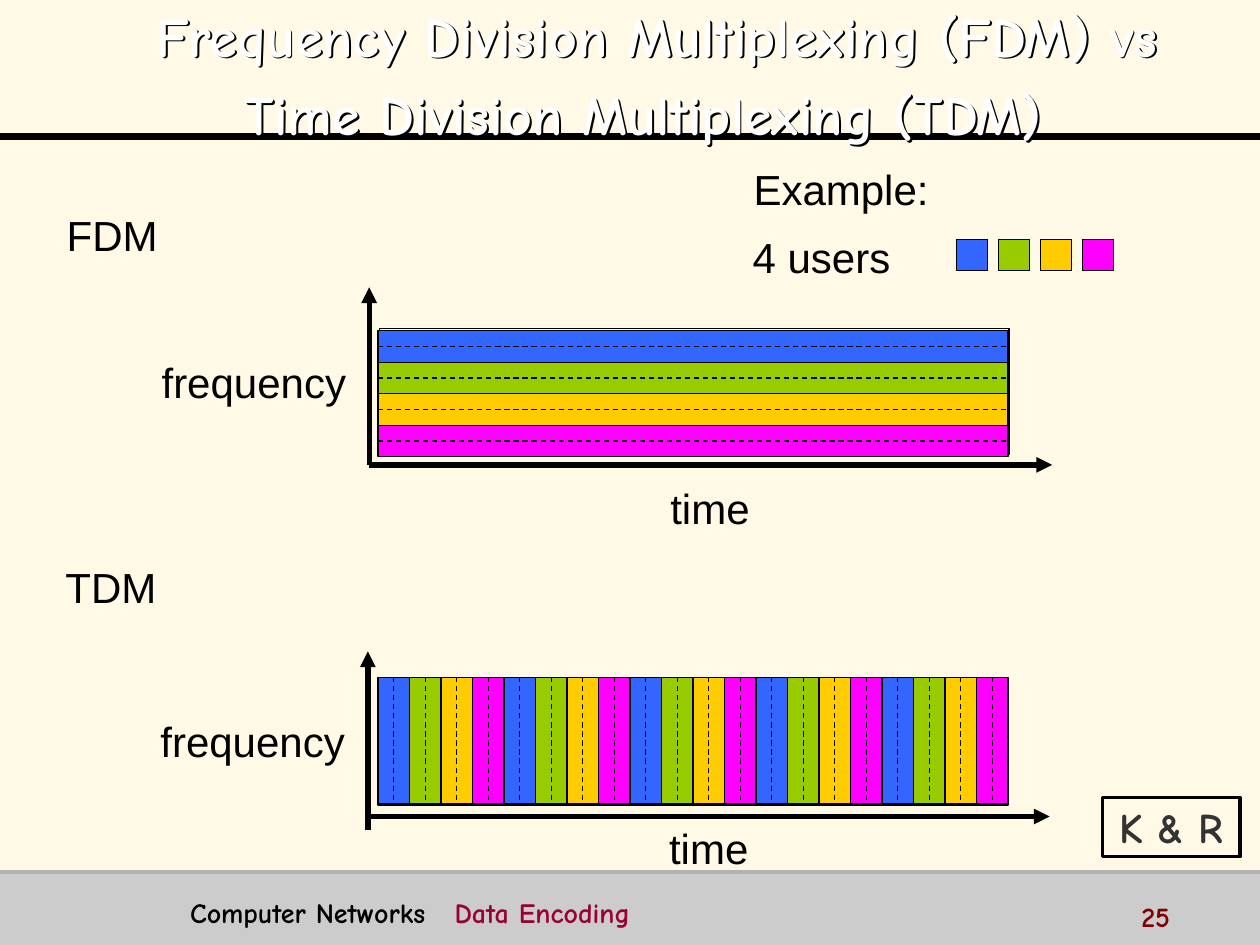
from dataclasses import dataclass

from lxml import etree
from pptx import Presentation
from pptx.dml.color import RGBColor
from pptx.enum.dml import MSO_LINE
from pptx.enum.shapes import MSO_CONNECTOR, MSO_SHAPE
from pptx.enum.text import MSO_ANCHOR, MSO_AUTO_SIZE, PP_ALIGN
from pptx.oxml.ns import qn
from pptx.util import Inches, Pt

STRAIGHT = MSO_CONNECTOR.STRAIGHT
RECTANGLE = MSO_SHAPE.RECTANGLE
DASH = MSO_LINE.DASH
CENTER, LEFT = PP_ALIGN.CENTER, PP_ALIGN.LEFT
MIDDLE = MSO_ANCHOR.MIDDLE

BLACK = "000000"
USER_COLORS = ("3366FF", "99CC00", "FFCC00", "FF00FF")
BODY_FONT, COMIC_FONT = "Arial", "Comic Neue"
BAND = 0.25
PLOT_LEFT, PLOT_WIDTH, PLOT_HEIGHT = 3, 5, 1
PLOT_RIGHT = PLOT_LEFT + PLOT_WIDTH
FDM_TOP = 2.75 - BAND / 2
TDM_TOP = 5.5 - BAND / 2


@dataclass(frozen=True)
class Label:
    text: str
    left: float
    top: float
    width: float


@dataclass(frozen=True)
class Diagram:
    labels: tuple[Label, ...]
    axis_x: float
    axis_bottom: float
    axis_top: float
    time_y: float
    time_end: float
    frame_left: float
    frame_top: float


FDM = Diagram(
    (Label("FDM", 0.43, 1.61, 0.92), Label("frequency", 1.18, 2.78, 1.67),
     Label("time", 5.22, 3.78, 0.83)),
    2.93, 3.69, 2.28, 3.69, 8.35, 3.01, 2.61)
TDM = Diagram(
    (Label("TDM", 0.42, 4.41, 0.92), Label("frequency", 1.17, 5.63, 1.67),
     Label("time", 5.21, 6.48, 0.83)),
    2.92, 6.59, 5.17, 6.48, 8.33, 3, 5.39)
LEGEND_LABELS = (Label("4 users", 5.87, 1.79, 1.3),
                 Label("Example:", 5.88, 1.25, 1.59))


def rgb(color: str) -> RGBColor:
    return RGBColor.from_string(color)


def add_line(slide, x1: float, y1: float, x2: float, y2: float, width: float = 0.75,
             color: str = BLACK, dashed: bool = False, arrow: bool = False) -> None:
    connector = slide.shapes.add_connector(
        STRAIGHT, Inches(x1), Inches(y1), Inches(x2), Inches(y2))
    connector.line.width = Pt(width)
    connector.line.color.rgb = rgb(color)
    if dashed:
        connector.line.dash_style = DASH
    if arrow:
        outline = connector._element.spPr.find(qn("a:ln"))
        etree.SubElement(outline, qn("a:tailEnd"), type="triangle")
    etree.SubElement(connector._element.spPr, qn("a:effectLst"))


def add_rect(slide, left: float, top: float, width: float, height: float,
             fill: str | None, line: str | None = BLACK, line_width: float = 0.75):
    rect = slide.shapes.add_shape(
        RECTANGLE, Inches(left), Inches(top), Inches(width), Inches(height))
    rect.shadow.inherit = False
    if fill:
        rect.fill.solid()
        rect.fill.fore_color.rgb = rgb(fill)
    else:
        rect.fill.background()
    if line:
        rect.line.color.rgb = rgb(line)
        rect.line.width = Pt(line_width)
    else:
        rect.line.fill.background()
    return rect


def add_run(paragraph, text: str, size: float, font: str, color: str, bold: bool) -> None:
    run = paragraph.add_run()
    run.text = text
    run.font.size = Pt(size)
    run.font.name = font
    run.font.bold = bold
    run.font.color.rgb = rgb(color)


def add_text_box(slide, left: float, top: float, width: float, height: float,
                 wrap: bool, align: PP_ALIGN):
    """Add an empty text box and return its first paragraph."""
    box = slide.shapes.add_textbox(
        Inches(left), Inches(top), Inches(width), Inches(height))
    box.text_frame.word_wrap = wrap
    paragraph = box.text_frame.paragraphs[0]
    paragraph.alignment = align
    return paragraph


def add_label(slide, label: Label) -> None:
    paragraph = add_text_box(slide, label.left, label.top, label.width, 0.5, False, CENTER)
    add_run(paragraph, label.text, 24, BODY_FONT, BLACK, False)


def add_diagram(slide, diagram: Diagram) -> None:
    """Draw the labels, both axes and the plot frame."""
    for label in diagram.labels:
        add_label(slide, label)
    add_line(slide, diagram.axis_x, diagram.axis_bottom,
             diagram.axis_x, diagram.axis_top, 3, arrow=True)
    add_line(slide, diagram.axis_x, diagram.time_y,
             diagram.time_end, diagram.time_y, 3, arrow=True)
    add_rect(slide, diagram.frame_left, diagram.frame_top,
             PLOT_WIDTH, PLOT_HEIGHT, None)


def add_frequency_bands(slide) -> None:
    for i, color in enumerate(USER_COLORS):
        add_rect(slide, PLOT_LEFT, FDM_TOP + i * BAND, PLOT_WIDTH, BAND, color)
    for i in range(len(USER_COLORS)):
        y = FDM_TOP + i * BAND
        if i:
            add_line(slide, PLOT_LEFT, y, PLOT_RIGHT, y)
        middle = y + BAND / 2
        add_line(slide, PLOT_LEFT, middle, PLOT_RIGHT, middle, dashed=True)


def add_time_slots(slide) -> None:
    slots = round(PLOT_WIDTH / BAND)
    bottom = TDM_TOP + PLOT_HEIGHT
    for i in range(slots):
        add_rect(slide, PLOT_LEFT + i * BAND, TDM_TOP, BAND, PLOT_HEIGHT,
                 USER_COLORS[i % len(USER_COLORS)])
    for i in range(slots):
        x = PLOT_LEFT + i * BAND
        if i:
            add_line(slide, x, TDM_TOP, x, bottom)
        middle = x + BAND / 2
        add_line(slide, middle, TDM_TOP, middle, bottom, dashed=True)


def add_legend(slide) -> None:
    for label in LEGEND_LABELS:
        add_label(slide, label)
    for i, color in enumerate(USER_COLORS):
        add_rect(slide, 7.59 + i / 3, 1.9, BAND, BAND, color)


def format_title(slide) -> None:
    title = slide.shapes.title
    title.left, title.top = Inches(0.48), Inches(-0.16)
    title.width, title.height = Inches(9.26), Inches(1.25)
    title.fill.background()
    effects = etree.SubElement(title._element.spPr, qn("a:effectLst"))
    shadow = etree.SubElement(effects, qn("a:outerShdw"),
                              dist=str(Pt(1.6)), dir="2700000")
    etree.SubElement(shadow, qn("a:srgbClr"), val=BLACK)
    frame = title.text_frame
    frame.word_wrap = True
    frame.auto_size = MSO_AUTO_SIZE.NONE
    frame.vertical_anchor = MIDDLE
    paragraph = frame.paragraphs[0]
    paragraph.alignment = CENTER
    paragraph.line_spacing = 1.1
    heading = "Frequency Division Multiplexing (FDM) vs Time Division Multiplexing (TDM)"
    for text, size in ((" ", 44), (heading, 32)):
        add_run(paragraph, text, size, COMIC_FONT, "FFFFFF", True)
    title._element.getparent().append(title._element)  # in front of the rule


def add_credit(slide) -> None:
    credit = add_rect(slide, 8.75, 6.33, 1.09, 0.47, None, line_width=2)
    credit.text_frame.word_wrap = False
    credit.text_frame.vertical_anchor = MIDDLE
    paragraph = credit.text_frame.paragraphs[0]
    paragraph.alignment = CENTER
    add_run(paragraph, "K & R", 24, COMIC_FONT, "333333", True)


def add_footer(slide) -> None:
    page = add_text_box(slide, 8.96, 7.09, 1, 0.25, True, LEFT)
    add_run(page, "25", 16, COMIC_FONT, "800000", True)
    course = add_text_box(slide, 1.41, 7.06, 7.28, 0.31, True, LEFT)
    tabs = etree.SubElement(course._p.get_or_add_pPr(), qn("a:tabLst"))
    etree.SubElement(tabs, qn("a:tab"), pos=str(Inches(2.1)), algn="l")
    add_run(course, "Computer Networks\t", 16, COMIC_FONT, BLACK, True)
    add_run(course, "Data Encoding", 16, COMIC_FONT, "990033", True)


def main() -> None:
    deck = Presentation()
    deck.slide_width, deck.slide_height = Inches(10), Inches(7.5)
    slide = deck.slides.add_slide(deck.slide_layouts[5])
    slide.background.fill.solid()
    slide.background.fill.fore_color.rgb = rgb("FFF9E6")
    add_rect(slide, 0, 6.92, 10, 0.58, "CCCCCC", None)
    add_line(slide, 0, 1.08, 10, 1.08, 4)
    add_line(slide, 0, 6.92, 10, 6.92, 2, "B2B2B2")
    format_title(slide)
    add_diagram(slide, FDM)
    add_frequency_bands(slide)
    add_diagram(slide, TDM)
    add_time_slots(slide)
    add_legend(slide)
    add_credit(slide)
    add_footer(slide)
    deck.save("out.pptx")


if __name__ == "__main__":
    main()
